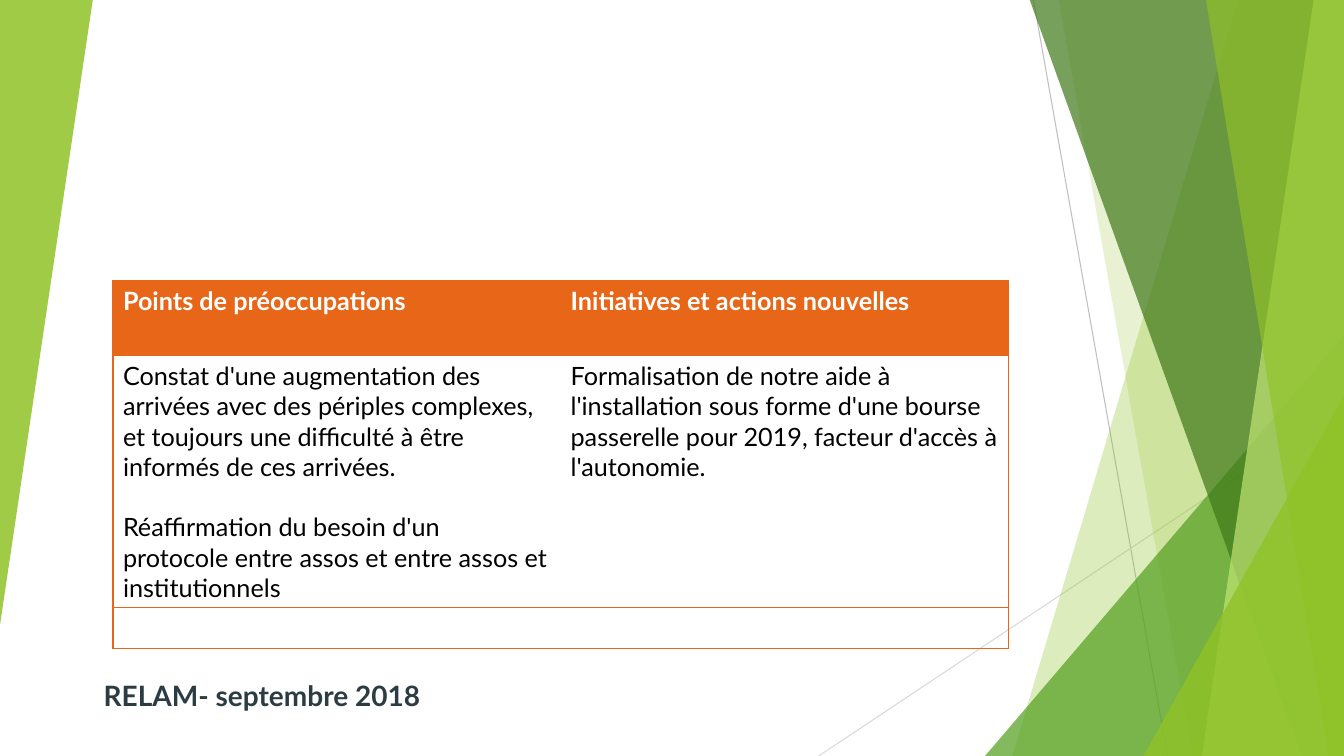
from lxml import etree
from pptx import Presentation
from pptx.dml.color import RGBColor
from pptx.enum.shapes import MSO_CONNECTOR, MSO_SHAPE
from pptx.enum.text import MSO_ANCHOR
from pptx.oxml.ns import qn
from pptx.util import Pt

PX = 9144  # EMU per px, 100 px to the inch
WIDTH, HEIGHT = 1333, 750
TRIANGLE = MSO_SHAPE.ISOSCELES_TRIANGLE
STRAIGHT = MSO_CONNECTOR.STRAIGHT
BOTTOM = MSO_ANCHOR.BOTTOM
FONT = "Lato"
COLORS = {
    "green": "90C226",
    "mid green": "54A021",
    "dark green": "3F7819",
    "light green": "C0E474",
    "grey": "BFBFBF",
    "pale grey": "D9D9D9",
    "orange": "E76618",
    "slate": "2C3C43",
    "white": "FFFFFF",
    "black": "000000",
}


def color(name):
    return RGBColor.from_string(COLORS[name])


def write(frame, *texts, size=18, bold=False, ink="black", gap=0):
    """Fill a text frame with one paragraph per text, gap points apart."""
    frame.word_wrap = True
    for index, text in enumerate(texts):
        para = frame.add_paragraph() if index else frame.paragraphs[0]
        if index:
            para.space_before = Pt(gap)
        span = para.add_run()
        span.text = text
        span.font.name = FONT
        span.font.size = Pt(size)
        span.font.bold = bold
        span.font.color.rgb = color(ink)


class Page:
    def __init__(self, deck):
        self.slide = deck.slides.add_slide(deck.slide_layouts[6])
        self.shapes = self.slide.shapes

    def line(self, start, end, ink):
        ends = [value * PX for value in (*start, *end)]
        line = self.shapes.add_connector(STRAIGHT, *ends)
        line.line.color.rgb = color(ink)
        line.line.width = Pt(0.75)
        etree.SubElement(line._element.spPr, qn("a:effectLst"))

    def paint(self, shape, fill, opacity):
        shape.shadow.inherit = False
        shape.line.fill.background()
        shape.fill.solid()
        shape.fill.fore_color.rgb = color(fill)
        tint = shape._element.spPr.find(qn("a:solidFill"))[0]
        etree.SubElement(tint, qn("a:alpha"), val=str(opacity * 1000))

    def band(self, top_left, top_right, bottom_left, fill, opacity):
        """Slanted band; it reaches the slide's right edge at the bottom."""
        builder = self.shapes.build_freeform(top_left, -1, scale=PX)
        corners = [(top_right, -1), (WIDTH, HEIGHT), (bottom_left, HEIGHT)]
        builder.add_line_segments(corners, close=True)
        self.paint(builder.convert_to_shape(), fill, opacity)

    def triangle(self, left, top, width, height, fill, opacity, rotation=0):
        box = [value * PX for value in (left, top, width, height)]
        shape = self.shapes.add_shape(TRIANGLE, *box)
        shape.adjustments[0] = 1
        shape.rotation = rotation
        self.paint(shape, fill, opacity)

    def text(self, left, top, width, height, *texts, **style):
        box = [value * PX for value in (left, top, width, height)]
        frame = self.shapes.add_textbox(*box).text_frame
        frame.vertical_anchor = BOTTOM
        write(frame, *texts, **style)

    def border(self, cell, sides):
        """Draw the named sides (L, R, T, B) and clear the others."""
        props = cell._tc.get_or_add_tcPr()
        for index, side in enumerate("LRTB"):
            edge = etree.Element(qn("a:ln" + side), w=str(Pt(1)))
            if side in sides:
                fill = etree.SubElement(edge, qn("a:solidFill"))
                etree.SubElement(fill, qn("a:srgbClr"), val=COLORS["orange"])
            else:
                etree.SubElement(edge, qn("a:noFill"))
            props.insert(index, edge)

    def table(self, left, top, columns, heights, rows):
        box = [v * PX for v in (left, top, sum(columns), sum(heights))]
        table = self.shapes.add_table(len(heights), len(columns), *box).table
        table.horz_banding = False
        for column, width in zip(table.columns, columns):
            column.width = width * PX
        for index, (row, height) in enumerate(zip(table.rows, heights)):
            row.height = height * PX
            header = index == 0
            for cell, side, texts in zip(row.cells, "LR", rows[index]):
                if header:
                    cell.fill.solid()
                    cell.fill.fore_color.rgb = color("orange")
                else:
                    cell.fill.background()
                ink = "white" if header else "black"
                write(cell.text_frame, *texts, bold=header, ink=ink, gap=21.6)
                self.border(cell, side + "TB")


def main():
    deck = Presentation()
    deck.slide_width, deck.slide_height = WIDTH * PX, HEIGHT * PX
    page = Page(deck)

    # Green facets, from back to front
    page.line((1025, 0), (1158, 750), "grey")
    page.line((1333, 403), (812, 750), "pale grey")
    page.band(1228, WIDTH, 1004, "green", 30)
    page.band(1050, WIDTH, 1183, "green", 20)
    page.triangle(977, 333, 356, 417, "mid green", 72)
    page.band(1021, WIDTH, 1291, "dark green", 70)
    page.band(1303, WIDTH, 1192, "light green", 70)
    page.band(1196, WIDTH, 1318, "green", 65)
    page.triangle(1134, 393, 199, 357, "green", 80)
    page.triangle(0, 0, 92, 620, "green", 85, rotation=180)

    # Title at the foot
    page.text(93, 58, 954, 653, "RELAM- septembre 2018",
              size=20, bold=True, ink="slate")

    # Concerns and new actions
    page.table(112, 278, [444, 444], [75, 250, 40], [
        [["Points de préoccupations"], ["Initiatives et actions nouvelles"]],
        [["Constat d'une augmentation des arrivées avec des périples "
          "complexes, et toujours une difficulté à être informés de ces "
          "arrivées.",
          "Réaffirmation du besoin d'un protocole entre assos et entre "
          "assos et institutionnels"],
         ["Formalisation de notre aide à l'installation sous forme d'une "
          "bourse passerelle pour 2019, facteur d'accès à l'autonomie."]],
        [[], []],
    ])
    deck.save("out.pptx")


if __name__ == "__main__":
    main()
